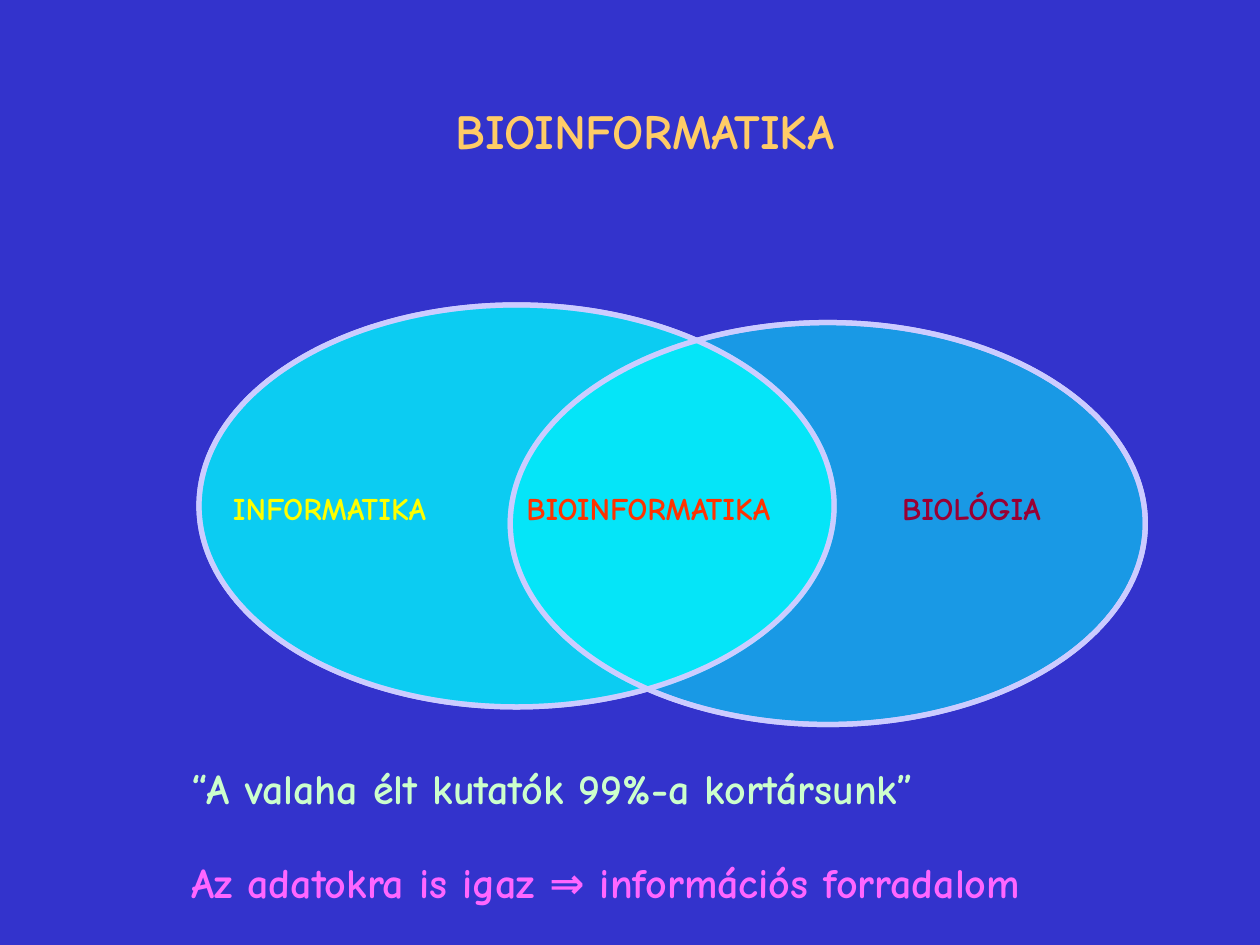
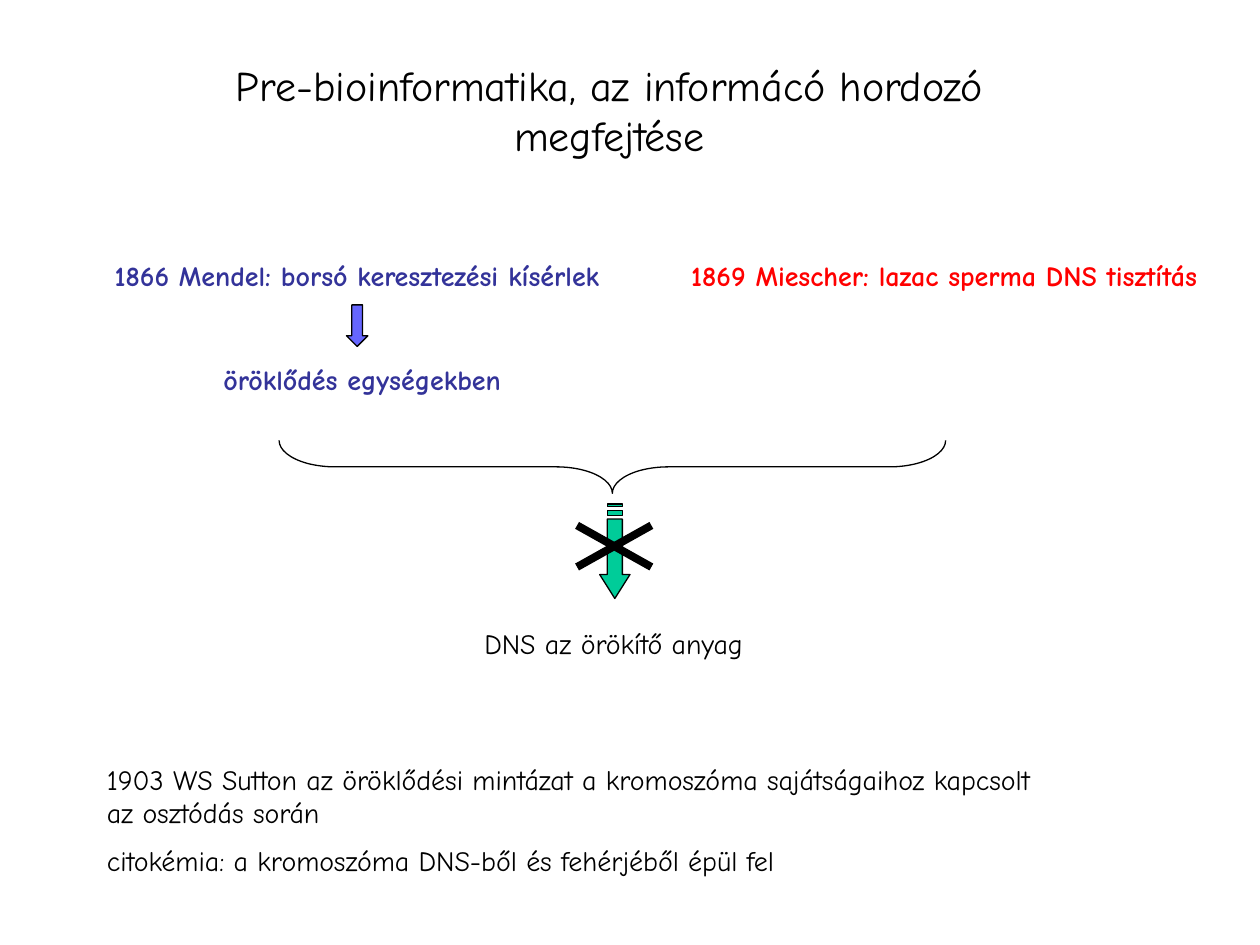
from lxml import etree
from pptx import Presentation
from pptx.dml.color import RGBColor
from pptx.enum.shapes import MSO_CONNECTOR, MSO_SHAPE
from pptx.enum.text import MSO_AUTO_SIZE, PP_ALIGN
from pptx.oxml.ns import qn
from pptx.util import Inches, Pt

FONT = "Comic Neue"
BLACK, WHITE, NAVY = "000000", "FFFFFF", "333399"
BLUE, CYAN, LILAC = "3333CC", "00FFFF", "CCCCFF"
LEFT, CENTER = PP_ALIGN.LEFT, PP_ALIGN.CENTER

VENN_LABELS = [
    (["BIOINFORMATIKA"], (2.58, 0.75, 5.08, 0.57), 28, "FFCC66", True, CENTER),
    (["INFORMATIKA"], (1.75, 3.83, 2.33, 0.4), 18, "FFFF00", True, LEFT),
    (["BIOINFORMATIKA"], (4.08, 3.83, 2.83, 0.4), 18, "FF3300", True, LEFT),
    (["BIOLÓGIA"], (6.75, 3.83, 1.92, 0.4), 18, "990033", True, CENTER),
    (["“A valaha élt kutatók 99%-a kortársunk”"],
     (1.42, 6, 7.83, 0.5), 24, "CCFFCC", True, LEFT),
    (["Az adatokra is igaz ⇒ információs forradalom"],
     (1.42, 6.75, 7.92, 0.5), 24, "FF66FF", True, LEFT),
]
INFORMATICS = (1.58, 2.42, 5.04, 3.19)
BIOLOGY = (4.05, 2.56, 5.04, 3.19)
VENN_LAYERS = [(INFORMATICS, CYAN), (BIOLOGY, CYAN), (INFORMATICS, CYAN), (BIOLOGY, None)]

HISTORY_LABELS = [
    (["Pre-bioinformatika, az informácó hordozó megfejtése"],
     (1.42, 0.42, 6.83, 0.9), 24, BLACK, False, CENTER),
    (["1866 Mendel: borsó keresztezési kísérlek"],
     (0.42, 2, 4.83, 0.37), 16, NAVY, True, CENTER),
    (["öröklődés egységekben"], (1.25, 2.83, 3.25, 0.37), 16, NAVY, True, CENTER),
    (["1869 Miescher: lazac sperma DNS tisztítás"],
     (5.08, 2, 4.83, 0.64), 16, "FF0000", True, CENTER),
    (["DNS az örökítő anyag"], (3.33, 4.92, 3.08, 0.37), 16, BLACK, False, CENTER),
    (["1903 WS Sutton az öröklődési mintázat a kromoszóma sajátságaihoz kapcsolt"
      " az osztódás során",
      "citokémia: a kromoszóma DNS-ből és fehérjéből épül fel"],
     (0.75, 6, 7.67, 1.04), 16, BLACK, False, LEFT),
]
ARROW_X, ARROW_TIP = 4.88, 4.75
SHAFT_TOP, HEAD_TOP = 4.12, 4.56
SHAFT_HALF, HEAD_HALF = 0.06, 0.12
STRIPES = [(4.05, 4.09), (4, 4.02)]
CROSS_LEFT, CROSS_TOP, CROSS_RIGHT, CROSS_BOTTOM = 4.58, 4.17, 5.17, 4.5


def rgb(color):
    return RGBColor.from_string(color)


def inches(values):
    return [Inches(value) for value in values]


def add_slide(deck, background):
    slide = deck.slides.add_slide(deck.slide_layouts[6])
    slide.background.fill.solid()
    slide.background.fill.fore_color.rgb = rgb(background)
    return slide


def add_label(slide, lines, box, size, color, bold, align):
    frame = slide.shapes.add_textbox(*inches(box)).text_frame
    frame.word_wrap = True
    frame.auto_size = MSO_AUTO_SIZE.SHAPE_TO_FIT_TEXT
    frame.text = "\n".join(lines)
    for index, paragraph in enumerate(frame.paragraphs):
        paragraph.alignment = align
        paragraph.space_before = Pt(size / 2 if index else 0)
        for run in paragraph.runs:
            run.font.name, run.font.size, run.font.bold = FONT, Pt(size), bold
            run.font.color.rgb = rgb(color)


def paint(shape, fill, line, width, opacity=100):
    shape.shadow.inherit = False
    if fill:
        shape.fill.solid()
        shape.fill.fore_color.rgb = rgb(fill)
        if opacity < 100:
            tint = shape.fill._xPr.find(".//" + qn("a:srgbClr"))
            etree.SubElement(tint, qn("a:alpha"), val=str(opacity * 1000))
    else:
        shape.fill.background()
    shape.line.color.rgb = rgb(line)
    shape.line.width = Pt(width)


def add_preset(slide, kind, box, fill, line, width, opacity=100):
    shape = slide.shapes.add_shape(kind, *inches(box))
    paint(shape, fill, line, width, opacity)
    return shape


def add_striped_arrow(slide):
    left, right = ARROW_X - SHAFT_HALF, ARROW_X + SHAFT_HALF
    arrow = [(right, HEAD_TOP), (right, SHAFT_TOP), (left, SHAFT_TOP), (left, HEAD_TOP),
             (ARROW_X - HEAD_HALF, HEAD_TOP), (ARROW_X, ARROW_TIP)]
    start = (ARROW_X + HEAD_HALF, HEAD_TOP)
    builder = slide.shapes.build_freeform(*inches(start), scale=1.0)
    builder.add_line_segments([inches(point) for point in arrow])
    for top, bottom in STRIPES:
        builder.move_to(*inches((right, top)))
        corners = [(left, top), (left, bottom), (right, bottom)]
        builder.add_line_segments([inches(point) for point in corners])
    paint(builder.convert_to_shape(), "00CC99", BLACK, 0.75)


def add_stroke(slide, ends):
    stroke = slide.shapes.add_connector(MSO_CONNECTOR.STRAIGHT, *inches(ends))
    stroke.line.color.rgb = rgb(BLACK)
    stroke.line.width = Pt(4.5)
    etree.SubElement(stroke._element.spPr, qn("a:effectLst"))


def build_venn(deck):
    slide = add_slide(deck, BLUE)
    for box, fill in VENN_LAYERS:
        add_preset(slide, MSO_SHAPE.OVAL, box, fill, LILAC, 3, 50)
    for label in VENN_LABELS:
        add_label(slide, *label)


def build_history(deck):
    slide = add_slide(deck, WHITE)
    for label in HISTORY_LABELS:
        add_label(slide, *label)
    add_preset(slide, MSO_SHAPE.DOWN_ARROW, (2.75, 2.42, 0.17, 0.33), "6666FF", BLACK, 0.75)
    brace = add_preset(slide, MSO_SHAPE.LEFT_BRACE, (4.65, 1.06, 0.42, 5.29), None, BLACK, 0.75)
    brace.adjustments[0] = 1.06
    brace.rotation = 270
    add_striped_arrow(slide)
    add_stroke(slide, (CROSS_RIGHT, CROSS_TOP, CROSS_LEFT, CROSS_BOTTOM))
    add_stroke(slide, (CROSS_LEFT, CROSS_TOP, CROSS_RIGHT, CROSS_BOTTOM))


def main():
    deck = Presentation()
    deck.slide_width, deck.slide_height = Inches(10), Inches(7.5)
    build_venn(deck)
    build_history(deck)
    deck.save("out.pptx")


if __name__ == "__main__":
    main()
